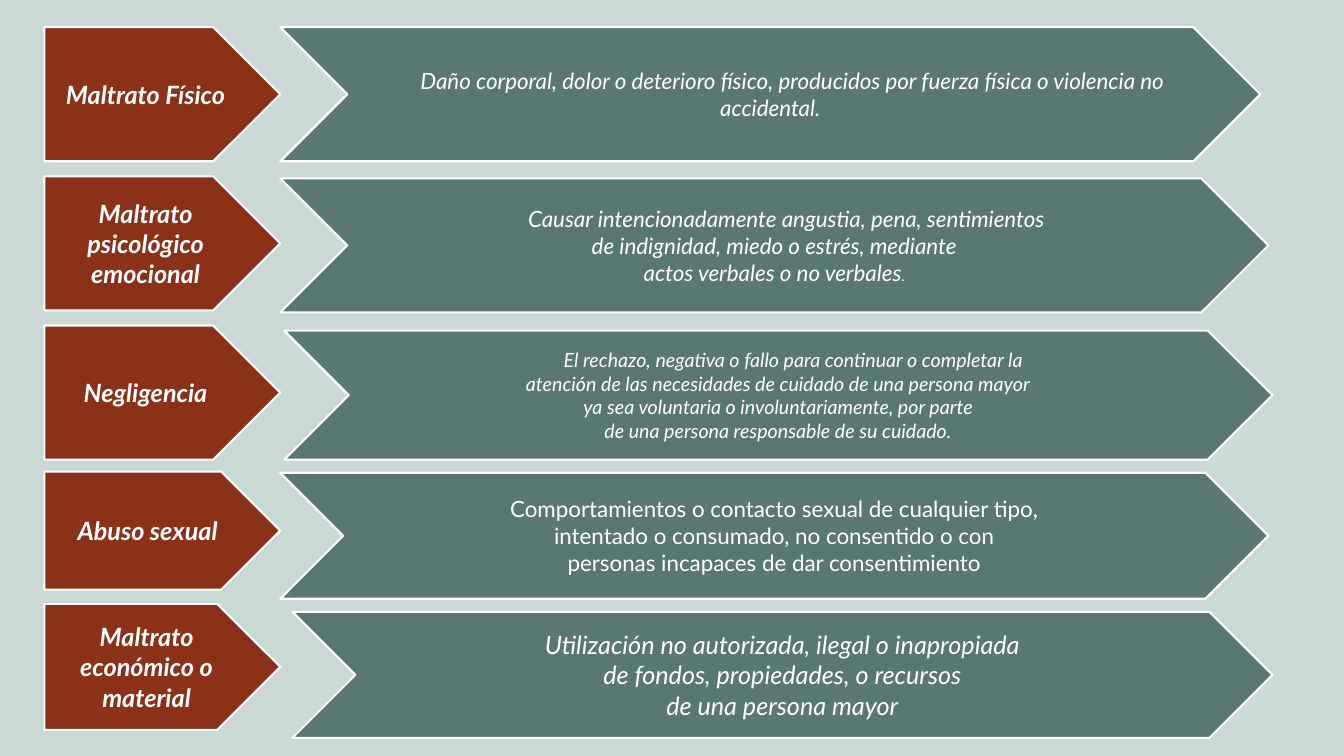
from dataclasses import dataclass

import pptx
import pptx.dml.color
import pptx.enum.shapes
import pptx.enum.text
import pptx.util
from pptx.util import Inches

COLORS = {
    "background": "CAD8D6",
    "label": "8A3118",
    "description": "597874",
    "white": "FFFFFF",
}
FONT = "Lato"
LABEL_LEFT, LABEL_WIDTH = 0.44, 2.34


@dataclass
class Box:
    left: float
    top: float
    width: float
    height: float


@dataclass
class AbuseType:
    name: str
    label_top: float
    label_height: float
    lines: list[str]
    box: Box
    size: int
    first_indent: float = 0
    italic: bool = True
    small_ending: str = ""


ABUSE_TYPES = [
    AbuseType(
        "Maltrato Físico", 0.27, 1.33,
        ["Daño corporal, dolor o deterioro físico, producidos por fuerza física "
         "o violencia no accidental."],
        Box(2.78, 0.27, 9.72, 1.33), 16, first_indent=0.44),
    AbuseType(
        "Maltrato psicológico emocional", 1.75, 1.33,
        ["Causar intencionadamente angustia, pena, sentimientos",
         "de indignidad, miedo o estrés, mediante",
         "actos verbales o no verbales"],
        Box(2.78, 1.77, 9.8, 1.33), 16, first_indent=0.24, small_ending="."),
    AbuseType(
        "Negligencia", 3.23, 1.33,
        ["El rechazo, negativa o fallo para continuar o completar la",
         "atención de las necesidades de cuidado de una persona mayor",
         "ya sea voluntaria o involuntariamente, por parte",
         "de una persona responsable de su cuidado."],
        Box(2.82, 3.28, 9.8, 1.28), 14, first_indent=0.3),
    AbuseType(
        "Abuso sexual", 4.68, 1.17,
        ["Comportamientos o contacto sexual de cualquier tipo,",
         "intentado o consumado, no consentido o con",
         "personas incapaces de dar consentimiento"],
        Box(2.78, 4.69, 9.8, 1.25), 16, italic=False),
    AbuseType(
        "Maltrato económico o material", 5.99, 1.25,
        ["Utilización no autorizada, ilegal o inapropiada",
         "de fondos, propiedades, o recursos",
         "de una persona mayor"],
        Box(2.9, 6.07, 9.72, 1.25), 18),
]


def rgb(name: str) -> pptx.dml.color.RGBColor:
    return pptx.dml.color.RGBColor.from_string(COLORS[name])


def add_arrow(slide, kind, box: Box, color: str, lines: list[str], size: int,
              bold: bool = False, italic: bool = True):
    """Draw an arrow-like shape with one centred paragraph per line."""
    shape = slide.shapes.add_shape(
        kind, Inches(box.left), Inches(box.top), Inches(box.width), Inches(box.height))
    shape.shadow.inherit = False
    shape.fill.solid()
    shape.fill.fore_color.rgb = rgb(color)
    shape.line.color.rgb = rgb("white")
    shape.line.width = pptx.util.Pt(1.5)
    text_frame = shape.text_frame
    text_frame.word_wrap = True
    text_frame.vertical_anchor = pptx.enum.text.MSO_ANCHOR.MIDDLE
    text_frame.text = "\n".join(lines)
    for paragraph in text_frame.paragraphs:
        paragraph.alignment = pptx.enum.text.PP_ALIGN.CENTER
        for run in paragraph.runs:
            format_run(run, size, bold, italic)
    return shape


def format_run(run, size: int, bold: bool, italic: bool) -> None:
    run.font.name = FONT
    run.font.size = pptx.util.Pt(size)
    run.font.bold = bold
    run.font.italic = italic
    run.font.color.rgb = rgb("white")


def add_abuse_type(slide, abuse: AbuseType) -> None:
    shapes = pptx.enum.shapes.MSO_SHAPE
    label_box = Box(LABEL_LEFT, abuse.label_top, LABEL_WIDTH, abuse.label_height)
    add_arrow(slide, shapes.PENTAGON, label_box, "label", [abuse.name], 18, bold=True)
    description = add_arrow(slide, shapes.CHEVRON, abuse.box, "description",
                            abuse.lines, abuse.size, italic=abuse.italic)
    paragraphs = description.text_frame.paragraphs
    if abuse.first_indent:
        properties = paragraphs[0]._p.get_or_add_pPr()
        properties.set("marL", "0")
        properties.set("indent", str(Inches(abuse.first_indent)))
    if abuse.small_ending:
        ending = paragraphs[-1].add_run()
        ending.text = abuse.small_ending
        format_run(ending, 10, False, abuse.italic)


def main() -> None:
    presentation = pptx.Presentation()
    presentation.slide_width = Inches(13.33)
    presentation.slide_height = Inches(7.5)
    slide = presentation.slides.add_slide(presentation.slide_layouts[6])
    slide.background.fill.solid()
    slide.background.fill.fore_color.rgb = rgb("background")
    for abuse in ABUSE_TYPES:
        add_abuse_type(slide, abuse)
    presentation.save("out.pptx")


if __name__ == "__main__":
    main()
